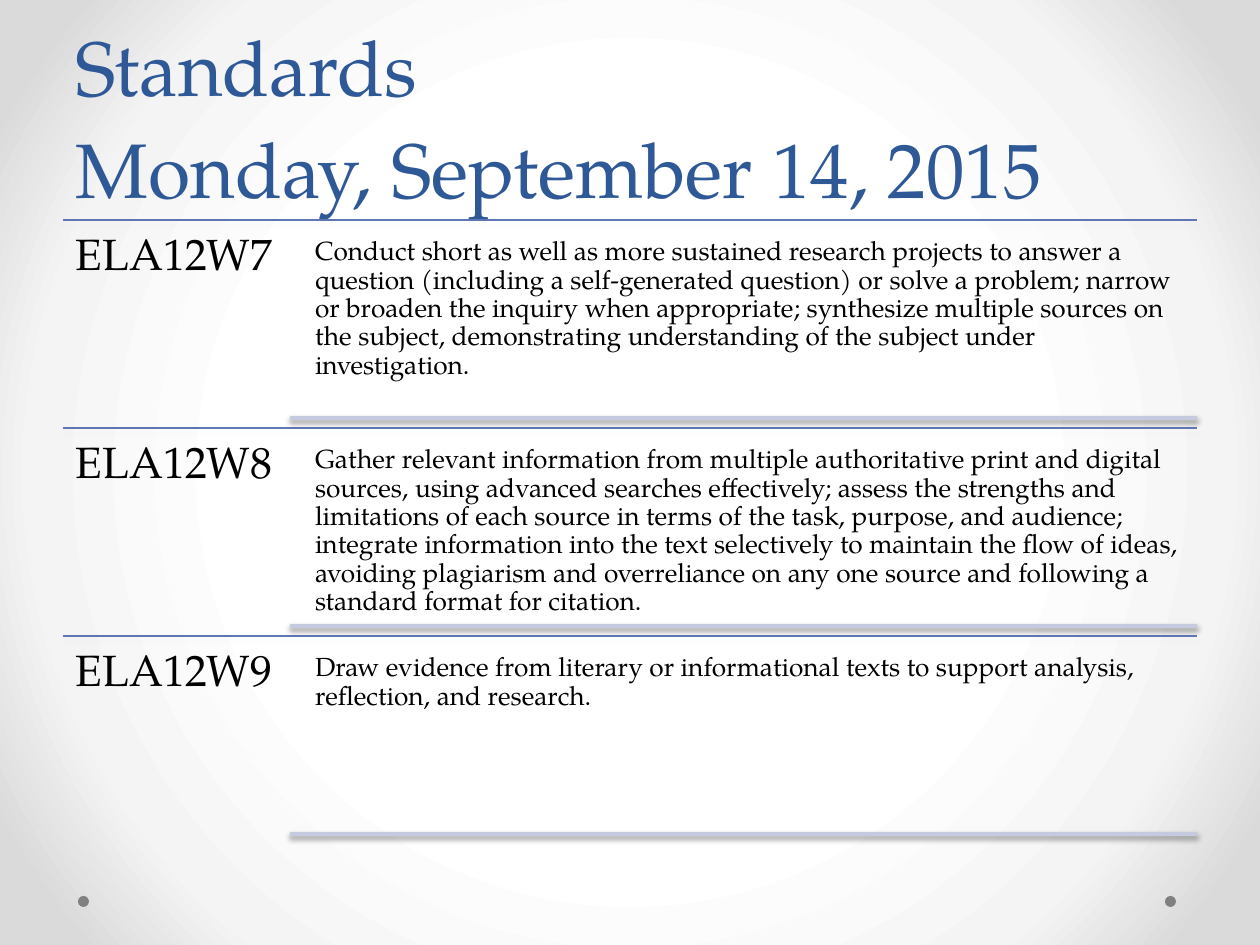
"""Build a slide listing three writing standards beneath a dated title."""
from dataclasses import dataclass

from lxml.etree import SubElement
from pptx import Presentation
from pptx.dml.color import RGBColor
from pptx.enum.shapes import MSO_CONNECTOR, MSO_SHAPE
from pptx.enum.text import MSO_ANCHOR, MSO_AUTO_SIZE, PP_ALIGN
from pptx.oxml import parse_xml
from pptx.oxml.ns import nsdecls, qn
from pptx.util import Pt

TITLE = ["Standards", "Monday, September 14, 2015"]
STANDARDS = [
    ("ELA12W7", "Conduct short as well as more sustained research projects to answer a question "
     "(including a self-generated question) or solve a problem; narrow or broaden the inquiry when "
     "appropriate; synthesize multiple sources on the subject, demonstrating understanding of the "
     "subject under investigation."),
    ("ELA12W8", "Gather relevant information from multiple authoritative print and digital sources, "
     "using advanced searches effectively; assess the strengths and limitations of each source in "
     "terms of the task, purpose, and audience; integrate information into the text selectively to "
     "maintain the flow of ideas, avoiding plagiarism and overreliance on any one source and "
     "following a standard format for citation."),
    ("ELA12W9", "Draw evidence from literary or informational texts to support analysis, "
     "reflection, and research."),
]


@dataclass(frozen=True)
class Theme:
    font: str = "TeX Gyre Pagella"
    title: str = "2F5897"
    text: str = "000000"
    rule: str = "6076B4"
    divider: str = "C5CADE"
    dot: str = "808080"
    backdrop: tuple = ((50, "FFFFFF"), (76, "F4F4F4"), (92, "DADADA"))
    title_size: float = 44
    title_spacing: float = 58
    code_size: float = 25
    detail_size: float = 15
    rule_width: float = 0.75
    divider_width: float = 2.25


THEME = Theme()
PAGE_WIDTH, PAGE_HEIGHT = 1260, 945
LEFT, RIGHT = 63, 1197
ROWS_TOP, ROW_HEIGHT = 220, 208
CODE_WIDTH = 227
DETAIL_LEFT, DETAIL_OFFSET, DETAIL_WIDTH, DETAIL_HEIGHT = 307, 10, 891, 189
DIVIDER_LEFT, DIVIDER_OFFSET = 290, 198
DOT_LEFTS, DOT_TOP, DOT_SIZE = (1165, 78), 896, 11


def px(value):
    return round(value * 914400 / 126)


def lengths(*values):
    return [px(value) for value in values]


def paint_background(page):
    page.background.fill.solid()
    properties = page.element.find(".//" + qn("p:bgPr"))
    stops = "".join(f'<a:gs pos="{position * 1000}"><a:srgbClr val="{color}"/></a:gs>'
                    for position, color in THEME.backdrop)
    gradient = parse_xml(
        f'<a:gradFill {nsdecls("a")} rotWithShape="1"><a:gsLst>{stops}</a:gsLst>'
        '<a:path path="circle"><a:fillToRect l="50000" t="50000" r="50000" b="50000"/>'
        '</a:path></a:gradFill>')
    properties.replace(properties[0], gradient)


def add_span(para, text, size, color):
    span = para.add_run()
    span.text = text
    span.font.name = THEME.font
    span.font.size = Pt(size)
    span.font.color.rgb = RGBColor.from_string(color)


def add_text(page, place, text, size, inset):
    frame = page.shapes.add_textbox(*lengths(*place)).text_frame
    frame.word_wrap = True
    frame.margin_left = frame.margin_right = frame.margin_top = frame.margin_bottom = px(inset)
    para = frame.paragraphs[0]
    para.line_spacing = 0.9
    add_span(para, text, size, THEME.text)


def add_line(page, left, top, color, width, opacity, distance):
    line = page.shapes.add_connector(MSO_CONNECTOR.STRAIGHT, *lengths(left, top, RIGHT, top))
    line.line.color.rgb = RGBColor.from_string(color)
    line.line.width = Pt(width)
    effects = SubElement(line.element.spPr, qn("a:effectLst"))
    shadow = SubElement(effects, qn("a:outerShdw"), blurRad=str(Pt(3.1)), dist=str(Pt(distance)),
                        dir="5400000", rotWithShape="0")
    shade = SubElement(shadow, qn("a:srgbClr"), val="000000")
    SubElement(shade, qn("a:alpha"), val=str(opacity * 1000))


def add_dot(page, left):
    dot = page.shapes.add_shape(MSO_SHAPE.OVAL, *lengths(left, DOT_TOP, DOT_SIZE, DOT_SIZE))
    dot.shadow.inherit = False
    dot.fill.solid()
    dot.fill.fore_color.rgb = RGBColor.from_string(THEME.dot)
    dot.line.fill.background()


def fill_title(title):
    title.left, title.top, title.width, title.height = lengths(LEFT, 0, RIGHT - LEFT, ROWS_TOP)
    frame = title.text_frame
    frame.auto_size = MSO_AUTO_SIZE.NONE
    frame.vertical_anchor = MSO_ANCHOR.BOTTOM
    para = frame.paragraphs[0]
    para.alignment = PP_ALIGN.LEFT
    para.line_spacing = Pt(THEME.title_spacing)
    for index, text in enumerate(TITLE):
        if index:
            para.add_line_break()
        add_span(para, text, THEME.title_size, THEME.title)


def add_standard(page, index, code, detail):
    top = ROWS_TOP + index * ROW_HEIGHT
    add_line(page, LEFT, top, THEME.rule, THEME.rule_width, 35, 1.8)
    add_text(page, (LEFT, top, CODE_WIDTH, ROW_HEIGHT), code, THEME.code_size, 13)
    add_text(page, (DETAIL_LEFT, top + DETAIL_OFFSET, DETAIL_WIDTH, DETAIL_HEIGHT),
             detail, THEME.detail_size, 8)
    add_line(page, DIVIDER_LEFT, top + DIVIDER_OFFSET, THEME.divider, THEME.divider_width, 38, 1.6)


def main():
    deck = Presentation()
    deck.slide_width, deck.slide_height = lengths(PAGE_WIDTH, PAGE_HEIGHT)
    page = deck.slides.add_slide(deck.slide_layouts[5])
    paint_background(page)
    for left in DOT_LEFTS:
        add_dot(page, left)
    fill_title(page.shapes.title)
    for index, (code, detail) in enumerate(STANDARDS):
        add_standard(page, index, code, detail)
    deck.save("out.pptx")


if __name__ == "__main__":
    main()
